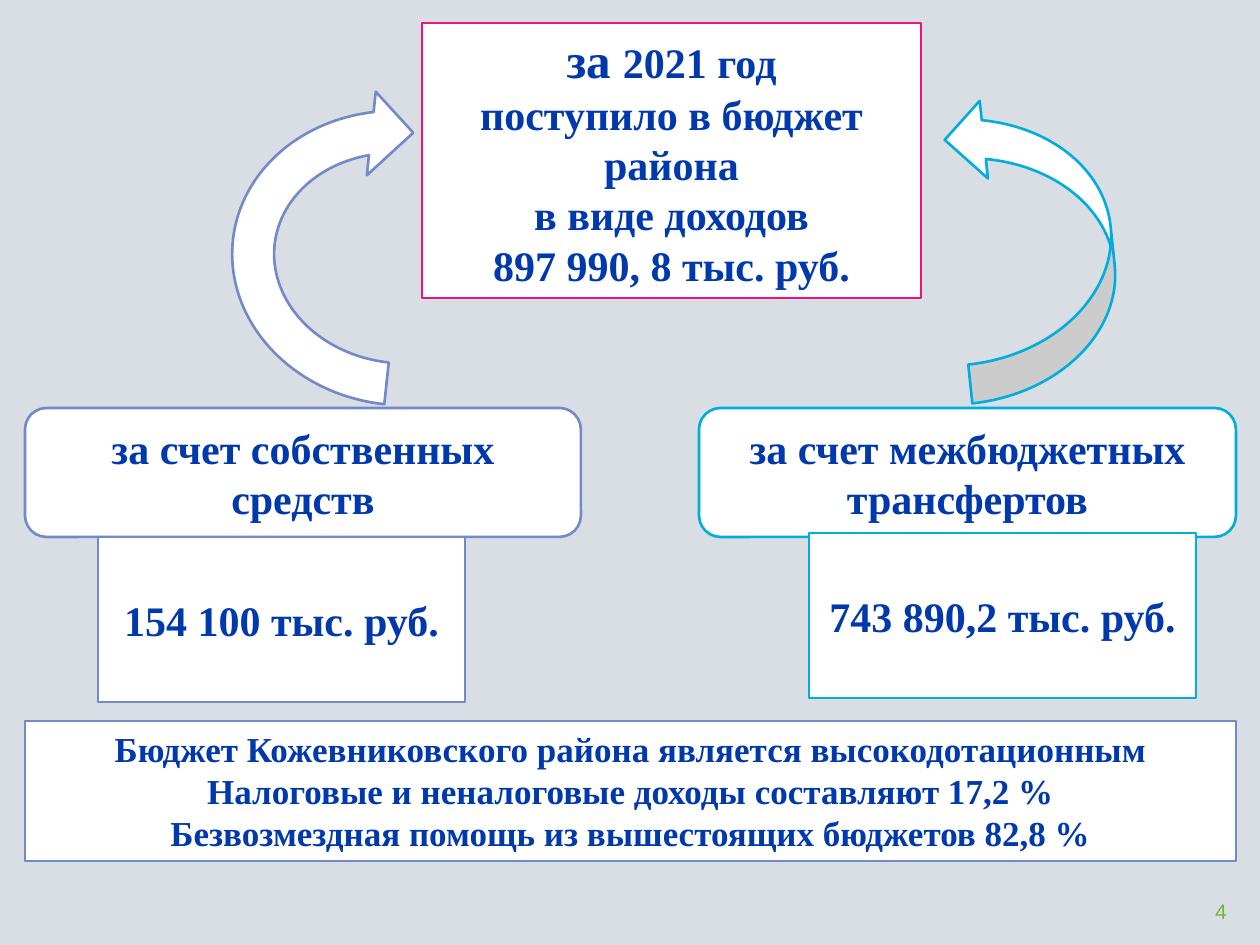
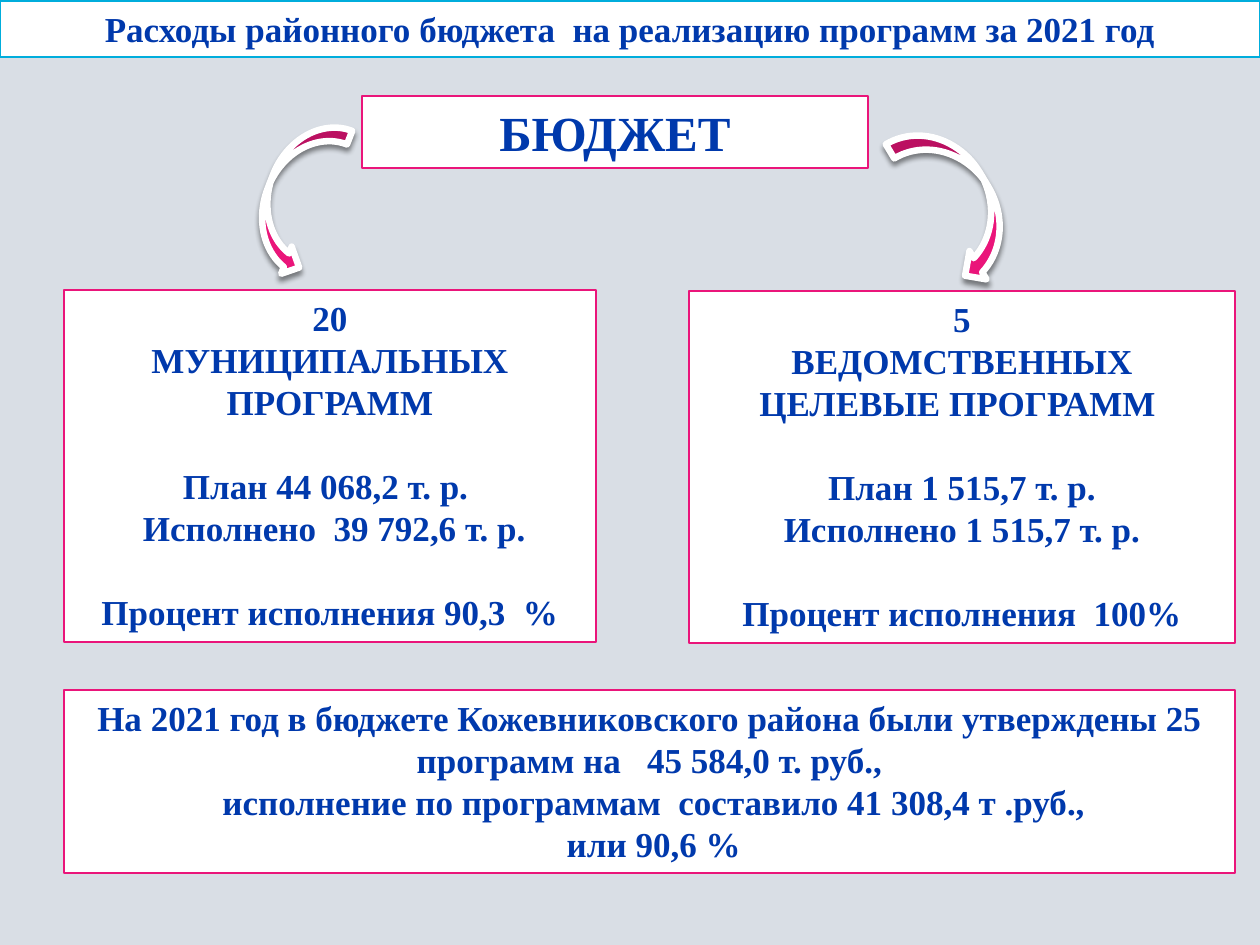
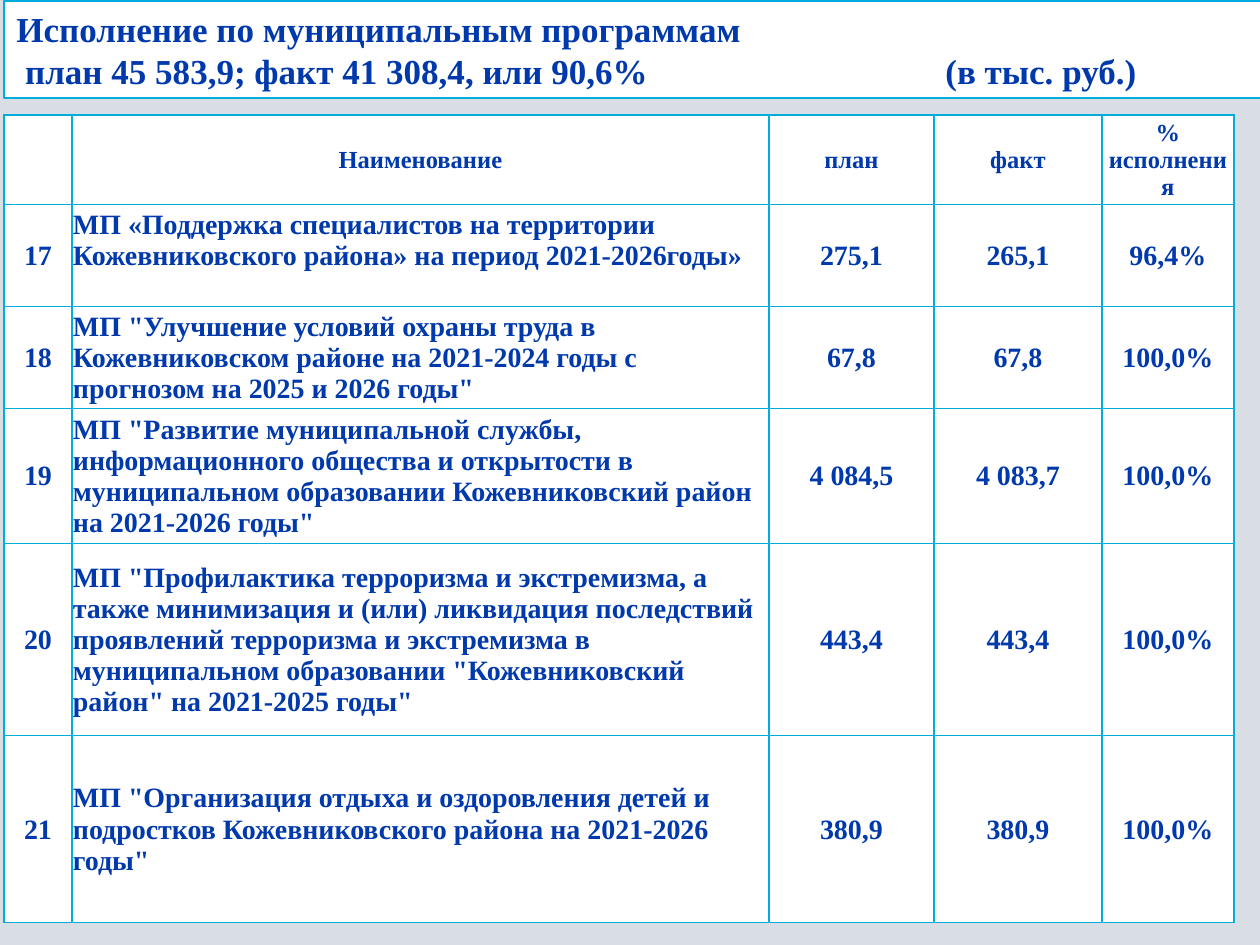
from lxml.etree import SubElement
from pptx import Presentation
from pptx.dml.color import RGBColor
from pptx.enum.shapes import MSO_SHAPE
from pptx.enum.text import MSO_ANCHOR, PP_ALIGN
from pptx.oxml.ns import qn
from pptx.util import Emu, Pt

BACK, WHITE, INK = "D9DEE5", "FFFFFF", "0039AC"
BLUE, CYAN, PINK, GREEN = "738AC8", "00ADDC", "EA157A", "70B834"
SERIF, SANS = "Times New Roman", "Arial"
WIDTH, HEIGHT = 1260, 945
GAP = 24
COLUMNS = [68, 697, 165, 168, 132]
ROWS = [89, 102, 102, 135, 192, 187]
PROGRAMS = [
    ["", "Наименование", "план", "факт", "% исполнения"],
    ["17", "МП «Поддержка специалистов на территории Кожевниковского района» "
     "на период 2021-2026годы»", "275,1", "265,1", "96,4%"],
    ["18", 'МП "Улучшение условий охраны труда в Кожевниковском районе на 2021-2024 годы '
     'с прогнозом на 2025 и 2026 годы"', "67,8", "67,8", "100,0%"],
    ["19", 'МП "Развитие муниципальной службы, информационного общества и открытости '
     'в муниципальном образовании Кожевниковский район на 2021-2026 годы"',
     "4 084,5", "4 083,7", "100,0%"],
    ["20", 'МП "Профилактика терроризма и экстремизма, а также минимизация и (или) ликвидация '
     'последствий проявлений терроризма и экстремизма в муниципальном образовании '
     '"Кожевниковский район" на 2021-2025 годы"', "443,4", "443,4", "100,0%"],
    ["21", 'МП "Организация отдыха и оздоровления детей и подростков Кожевниковского района '
     'на 2021-2026 годы"', "380,9", "380,9", "100,0%"],
]


def px(n):
    """Turn pixels into EMU."""
    return Emu(round(n * 914400 / 126))


def rgb(color):
    """Turn a hex string into a colour."""
    return RGBColor.from_string(color)


def style(font, size, color=INK, name=SERIF, bold=True):
    """Set the look of a font."""
    font.size, font.name, font.bold = Pt(size), name, bold
    font.color.rgb = rgb(color)


def new_slide(prs):
    """Add a blank slide with the shared background."""
    s = prs.slides.add_slide(prs.slide_layouts[6])
    s.background.fill.solid()
    s.background.fill.fore_color.rgb = rgb(BACK)
    return s


def add_figure(s, kind, box, fill, line, width=1.5, rotation=0):
    """Add an outlined preset shape without a shadow."""
    sp = s.shapes.add_shape(kind, *map(px, box))
    sp.shadow.inherit = False
    sp.fill.solid()
    sp.fill.fore_color.rgb = rgb(fill)
    sp.line.color.rgb = rgb(line)
    sp.line.width = Pt(width)
    sp.rotation = rotation
    return sp


def add_panel(s, box, line, lines, size=20, kind=MSO_SHAPE.RECTANGLE,
              anchor=MSO_ANCHOR.TOP, align=PP_ALIGN.CENTER, gaps=()):
    """Add a white panel with text; gaps lists paragraphs set apart from the one before."""
    sp = add_figure(s, kind, box, WHITE, line)
    tf = sp.text_frame
    tf.word_wrap = True
    tf.vertical_anchor = anchor
    tf.text = "\n".join(lines)
    for i, p in enumerate(tf.paragraphs):
        p.alignment = align
        if i in gaps:
            p.space_before = Pt(GAP)
        for r in p.runs:
            style(r.font, size)
    return sp


def add_number(s, number):
    """Add the slide number at the bottom right."""
    tf = s.shapes.add_textbox(*map(px, (1134, 892, 105, 34))).text_frame
    tf.word_wrap = True
    p = tf.paragraphs[0]
    p.text = number
    p.alignment = PP_ALIGN.RIGHT
    style(p.runs[0].font, 12, GREEN, SANS, False)


def add_shadow(sp):
    """Add a soft shadow below a shape."""
    effects = sp._element.spPr.find(qn("a:effectLst"))
    shadow = SubElement(effects, qn("a:outerShdw"), blurRad="38100", dist="30480",
                        dir="5400000", rotWithShape="0")
    color = SubElement(shadow, qn("a:srgbClr"), val="000000")
    SubElement(color, qn("a:alpha"), val="45000")


def add_source(s, box, line, name, amount, amount_box):
    """Add an income source with its amount, placed relative to the source box."""
    x, y, w, h = box
    dx, dy, aw, ah = amount_box
    add_panel(s, box, line, [name], 24, MSO_SHAPE.ROUNDED_RECTANGLE, MSO_ANCHOR.MIDDLE)
    add_panel(s, (x + dx, y + dy, aw, ah), line, [amount], 24, anchor=MSO_ANCHOR.MIDDLE)


def income_slide(prs):
    """Build the slide on income and its two sources."""
    s = new_slide(prs)
    add_number(s, "4")
    add_panel(s, (25, 721, 1211, 140), BLUE, [
        "Бюджет Кожевниковского района является высокодотационным "
        "Налоговые и неналоговые доходы составляют 17,2 %",
        "Безвозмездная помощь из вышестоящих бюджетов 82,8 %"])
    total = add_panel(s, (422, 23, 499, 275), PINK, [
        "за ", "поступило в бюджет района", "в виде доходов", "897 990, 8 тыс. руб."], 24)
    p = total.text_frame.paragraphs[0]
    p.runs[0].font.size = Pt(28)
    r = p.add_run()
    r.text = "2021 год"
    style(r.font, 24)
    add_source(s, (25, 408, 556, 129), BLUE, "за счет собственных средств",
               "154 100 тыс. руб.", (73, 129, 367, 165))
    add_source(s, (699, 408, 537, 129), CYAN, "за счет межбюджетных трансфертов",
               "743 890,2 тыс. руб.", (110, 125, 387, 165))
    add_figure(s, MSO_SHAPE.CIRCULAR_ARROW, (232, 69, 336, 378), WHITE, BLUE, rotation=276.1)
    add_figure(s, MSO_SHAPE.CURVED_UP_ARROW, (882, 166, 304, 156), WHITE, CYAN, rotation=264)


def programs_slide(prs):
    """Build the slide on spending by kind of programme."""
    s = new_slide(prs)
    add_panel(s, (0, 1, WIDTH, 56), CYAN,
              ["Расходы районного бюджета  на реализацию программ за 2021 год"])
    add_panel(s, (362, 96, 506, 72), PINK, ["БЮДЖЕТ"], 28)
    groups = [
        ((689, 291, 546, 352), ["5", "ВЕДОМСТВЕННЫХ ЦЕЛЕВЫЕ ПРОГРАММ ", "План 1 515,7 т. р.",
                                "Исполнено 1 515,7 т. р.", "Процент исполнения  100%"]),
        ((64, 290, 532, 352), ["20", "МУНИЦИПАЛЬНЫХ ПРОГРАММ", "План 44 068,2 т. р. ",
                               " Исполнено  39 792,6 т. р.", "Процент исполнения 90,3  %"]),
    ]
    for box, lines in groups:
        add_panel(s, box, PINK, lines, gaps=(2, 4))
    arrows = [
        (MSO_SHAPE.CURVED_LEFT_ARROW, (925, 115, 66, 170), 328.9),
        (MSO_SHAPE.CURVED_RIGHT_ARROW, (267, 115, 58, 161), 21.2),
    ]
    for kind, box, rotation in arrows:
        add_shadow(add_figure(s, kind, box, PINK, WHITE, 3.75, rotation))
    add_panel(s, (64, 690, 1171, 183), PINK, [
        "На 2021 год в бюджете Кожевниковского района были утверждены 25 программ "
        "на   45 584,0 т. руб.,",
        " исполнение по программам  составило 41 308,4 т .руб.,",
        " или 90,6 %"])


def add_borders(cell):
    """Draw thin lines on the four sides of a cell, ahead of its fill."""
    tcPr = cell._tc.get_or_add_tcPr()
    for i, side in enumerate(("lnL", "lnR", "lnT", "lnB")):
        ln = SubElement(tcPr, qn(f"a:{side}"), w="12700")
        SubElement(SubElement(ln, qn("a:solidFill")), qn("a:srgbClr"), val=CYAN)
        tcPr.insert(i, ln)


def fill_cell(cell, text, row, col):
    """Write and style one table cell."""
    cell.fill.solid()
    cell.fill.fore_color.rgb = rgb(WHITE)
    add_borders(cell)
    cell.vertical_anchor = MSO_ANCHOR.MIDDLE
    cell.margin_left = cell.margin_right = px(1 if row else 2)
    cell.margin_top = px(1)
    cell.margin_bottom = px(31 if (row, col) == (1, 1) else 0)
    p = cell.text_frame.paragraphs[0]
    p.text = text
    p.alignment = PP_ALIGN.LEFT if row and col == 1 else PP_ALIGN.CENTER
    for r in p.runs:
        style(r.font, 16 if row else 14)


def add_programs(s, x, y):
    """Add the table of programmes."""
    box = (x, y, sum(COLUMNS), sum(ROWS))
    table = s.shapes.add_table(len(ROWS), len(COLUMNS), *map(px, box)).table
    table.first_row = table.horz_banding = False
    for column, width in zip(table.columns, COLUMNS):
        column.width = px(width)
    for i, (height, texts) in enumerate(zip(ROWS, PROGRAMS)):
        table.rows[i].height = px(height)
        for j, text in enumerate(texts):
            fill_cell(table.cell(i, j), text, i, j)


def results_slide(prs):
    """Build the slide with results by programme."""
    s = new_slide(prs)
    title = add_panel(s, (4, 1, WIDTH, 97), CYAN, [
        "Исполнение по муниципальным программам",
        " план 45 583,9; факт 41 308,4, или 90,6%\t(в тыс. руб.)"], align=PP_ALIGN.LEFT)
    pPr = title.text_frame.paragraphs[1]._p.get_or_add_pPr()
    tabs = SubElement(pPr, qn("a:tabLst"))
    SubElement(tabs, qn("a:tab"), pos=str(px(929)), algn="l")
    add_programs(s, 4, 115)


def main():
    """Build and save the presentation."""
    prs = Presentation()
    prs.slide_width, prs.slide_height = px(WIDTH), px(HEIGHT)
    for build in (income_slide, programs_slide, results_slide):
        build(prs)
    prs.save("out.pptx")


if __name__ == "__main__":
    main()
